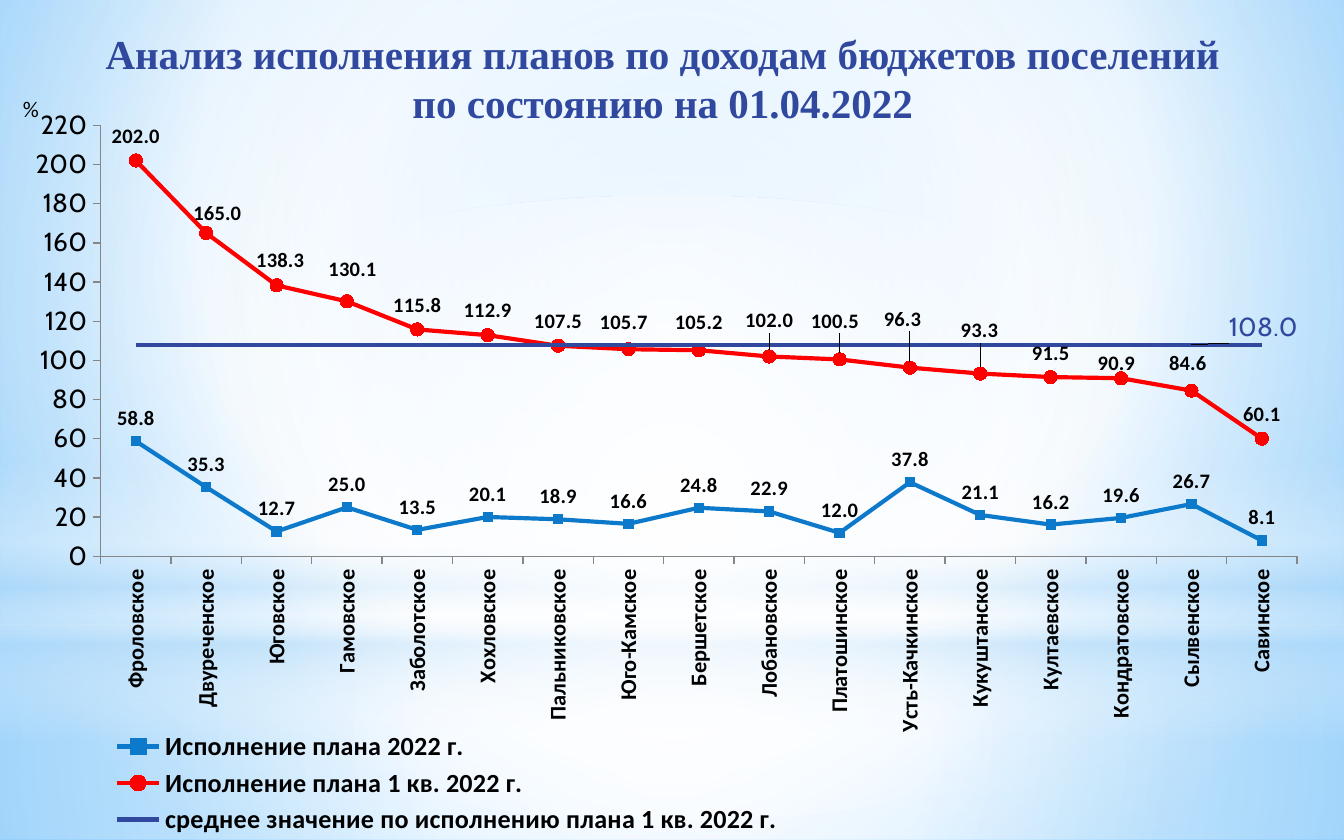
from lxml import etree
from pptx import Presentation
from pptx.chart.data import CategoryChartData
from pptx.dml.color import RGBColor
from pptx.enum import chart as charts, shapes, text
from pptx.oxml import ns
from pptx.util import Pt

THEME = {
    "title": "31489F", "plan": "0D79CA", "quarter": "FF0000", "text": "000000", "axis": "868686",
    "sky": "9ED5FF", "deep": "5BB9FF", "mist": "B4DCFA", "white": "FFFFFF",
    "title_size": 22, "value_size": 14, "category_size": 12, "label_size": 11, "base_size": 18,
    "serif": "Times New Roman", "sans": "Calibri", "display": "Cabin",
}


def gradient(parent, stops, focus=None):
    old = parent.find(ns.qn("a:gradFill"))
    fill = etree.Element(ns.qn("a:gradFill"), rotWithShape="1")
    stop_list = etree.SubElement(fill, ns.qn("a:gsLst"))
    for position, color, alpha in stops:
        stop = etree.SubElement(stop_list, ns.qn("a:gs"), pos=str(position * 1000))
        tint = etree.SubElement(stop, ns.qn("a:srgbClr"), val=THEME[color])
        if alpha < 100:
            etree.SubElement(tint, ns.qn("a:alpha"), val=str(alpha * 1000))
    if focus:
        route = etree.SubElement(fill, ns.qn("a:path"))
        route.set("path", "circle")
        edges = {side: str(value * 1000) for side, value in zip("ltrb", focus)}
        etree.SubElement(route, ns.qn("a:fillToRect"), **edges)
    else:
        etree.SubElement(fill, ns.qn("a:lin"), ang="5400000", scaled="0")
    parent.replace(old, fill)


def place(parent, index, **settings):
    layout = parent.find(ns.qn("c:layout"))
    if layout is None:
        layout = etree.Element(ns.qn("c:layout"))
        parent.insert(index, layout)
    manual = etree.SubElement(layout, ns.qn("c:manualLayout"))
    for name, value in settings.items():
        etree.SubElement(manual, ns.qn("c:" + name), val=str(value))


presentation = Presentation()
presentation.slide_width, presentation.slide_height = Pt(720), Pt(450)
slide = presentation.slides.add_slide(presentation.slide_layouts[5])

slide.background.fill.gradient()
gradient(slide.background._cSld.bg.bgPr,
         [(0, "sky", 100), (60, "white", 100), (100, "deep", 100)], (20, 10, 20, 60))

center = (50, 50, 50, 50)
rectangle, oval = shapes.MSO_SHAPE.RECTANGLE, shapes.MSO_SHAPE.OVAL
glows = [
    (rectangle, 334.8, 115.2, [(0, "white", 91), (37, "white", 76), (100, "mist", 79)], center),
    (rectangle, 0, 334.8, [(0, "white", 89), (48, "white", 62), (100, "mist", 79)], center),
    (rectangle, 247, 149.8, [(0, "white", 0), (29, "white", 30), (45, "mist", 40),
                             (55, "white", 26), (65, "mist", 60), (100, "white", 0)], None),
    (oval, 105, 334.8, [(0, "white", 100), (56, "white", 0)], center),
]
for order, (kind, top, height, stops, focus) in enumerate(glows):
    shape = slide.shapes.add_shape(kind, Pt(0), Pt(top), Pt(720), Pt(height))
    shape.shadow.inherit = False
    shape.line.fill.background()
    shape.fill.gradient()
    gradient(shape._element.spPr, stops, focus)
    slide.shapes._spTree.insert(2 + order, shape._element)

title = slide.shapes.title
title.left, title.top, title.width, title.height = Pt(14.4), Pt(9.4), Pt(692), Pt(64)
frame = title.text_frame
frame.word_wrap = True
frame.auto_size = text.MSO_AUTO_SIZE.NONE
frame.vertical_anchor = text.MSO_ANCHOR.MIDDLE
frame.margin_right = Pt(18)
paragraph = frame.paragraphs[0]
paragraph.alignment = text.PP_ALIGN.CENTER
for number, line in enumerate(["Анализ исполнения планов по доходам бюджетов поселений",
                               "по состоянию на 01.04.2022"]):
    if number:
        paragraph.add_line_break()
    run = paragraph.add_run()
    run.text = line
    run.font.name, run.font.size, run.font.bold = THEME["serif"], Pt(THEME["title_size"]), True
    run.font.color.rgb = RGBColor.from_string(THEME["title"])

settlements = [
    ("Фроловское", 58.8, 202), ("Двуреченское", 35.3, 165), ("Юговское", 12.7, 138.3),
    ("Гамовское", 25, 130.1), ("Заболотское", 13.5, 115.8), ("Хохловское", 20.1, 112.9),
    ("Пальниковское", 18.9, 107.5), ("Юго-Камское", 16.6, 105.7), ("Бершетское", 24.8, 105.2),
    ("Лобановское", 22.9, 102), ("Платошинское", 12, 100.5), ("Усть-Качкинское", 37.8, 96.3),
    ("Кукуштанское", 21.1, 93.3), ("Култаевское", 16.2, 91.5), ("Кондратовское", 19.6, 90.9),
    ("Сылвенское", 26.7, 84.6), ("Савинское", 8.1, 60.1),
]
names, plan, quarter = zip(*settlements)
data = CategoryChartData(number_format="#,##0.0")
data.categories = names
data.add_series("Исполнение плана 2022 г.", plan)
data.add_series("Исполнение плана 1 кв. 2022 г.", quarter)
data.add_series("среднее значение по исполнению плана 1 кв. 2022 г.", [108] * len(names))

chart_width, chart_height = 717, 406
chart = slide.shapes.add_chart(charts.XL_CHART_TYPE.LINE_MARKERS, Pt(3), Pt(44),
                               Pt(chart_width), Pt(chart_height), data).chart
chart.has_title = False
chart.font.name, chart.font.size = THEME["display"], Pt(THEME["base_size"])
chart.font.color.rgb = RGBColor.from_string(THEME["text"])
edge = {"xMode": "edge", "yMode": "edge"}
place(chart._chartSpace.chart.plotArea, 0, layoutTarget="inner", **edge,
      x=0.071, y=0.057, w=0.894, h=0.569)

chart.has_legend = True
legend = chart.legend
legend.position = charts.XL_LEGEND_POSITION.BOTTOM
legend.include_in_layout = False
legend.font.name, legend.font.size, legend.font.bold = THEME["sans"], Pt(14), True
place(legend._element, 1, **edge, x=0.05, y=0.85, w=0.56, h=0.15)

category_axis, value_axis = chart.category_axis, chart.value_axis
for axis in (category_axis, value_axis):
    axis.has_major_gridlines = False
    axis.major_tick_mark = charts.XL_TICK_MARK.OUTSIDE
    axis.format.line.color.rgb = RGBColor.from_string(THEME["axis"])
    axis.format.line.width = Pt(0.75)
font = category_axis.tick_labels.font
font.name, font.size, font.bold = THEME["sans"], Pt(THEME["category_size"]), True
category_axis._element.find(ns.qn("c:txPr")).find(ns.qn("a:bodyPr")).set("rot", "-5400000")

value_axis.minimum_scale, value_axis.maximum_scale, value_axis.major_unit = 0, 220, 20
value_axis.tick_labels.number_format = "#,##0"
value_axis.tick_labels.number_format_is_linked = False
value_axis.tick_labels.font.size = Pt(THEME["value_size"])
value_axis.has_title = True
unit_frame = value_axis.axis_title.text_frame
unit = unit_frame.paragraphs[0].add_run()
unit.text = "%"
unit.font.name, unit.font.size, unit.font.bold = THEME["sans"], Pt(12), False
unit_frame._txBody.bodyPr.set("rot", "0")
place(value_axis.axis_title._element, 1, **edge, x=0.01, y=0.01)

marker = charts.XL_MARKER_STYLE
styles = [("plan", marker.SQUARE, 5), ("quarter", marker.CIRCLE, 7), ("title", marker.NONE, 5)]
plot = chart.plots[0]
plot.vary_by_categories = False
for series, (color_name, style, size) in zip(plot.series, styles):
    color = RGBColor.from_string(THEME[color_name])
    series.smooth = False
    series.format.line.color.rgb = color
    series.format.line.width = Pt(2.25)
    series.marker.style, series.marker.size = style, size
    if style == marker.NONE:
        continue
    series.marker.format.fill.solid()
    series.marker.format.fill.fore_color.rgb = color
    series.marker.format.line.color.rgb = color
    labels = series.data_labels
    labels.show_value = True
    labels.position = charts.XL_LABEL_POSITION.ABOVE
    labels.number_format, labels.number_format_is_linked = "#,##0.0", False
    labels.font.name, labels.font.size, labels.font.bold = THEME["sans"], Pt(THEME["label_size"]), True

label_shifts = [
    (1, 1, 6, 2.5), (1, 2, 2, 0), (1, 3, 3, -4), (1, 7, -2.5, -1), (1, 8, 0, -2), (1, 9, 0, -6),
    (1, 10, -2.5, -7.5), (1, 11, -4, -13), (1, 12, -0.5, -10), (1, 13, 0, 0.5), (1, 14, -2.5, 5),
    (1, 15, -2, -1.5), (2, 15, 38.5, 2),
]
for series_index, point_index, right, down in label_shifts:
    average = series_index == 2
    label = plot.series[series_index].points[point_index].data_label
    label.position = charts.XL_LABEL_POSITION.ABOVE
    label.font.name = THEME["display" if average else "sans"]
    label.font.size = Pt(THEME["value_size" if average else "label_size"])
    label.font.bold = not average
    label.font.color.rgb = RGBColor.from_string(THEME["title" if average else "text"])
    element = label._dLbl
    element.insert(1, etree.Element(ns.qn("c:numFmt"), formatCode="#,##0.0", sourceLinked="0"))
    place(element, 1, x=round(right / chart_width, 4), y=round(down / chart_height, 4))

presentation.save("out.pptx")
